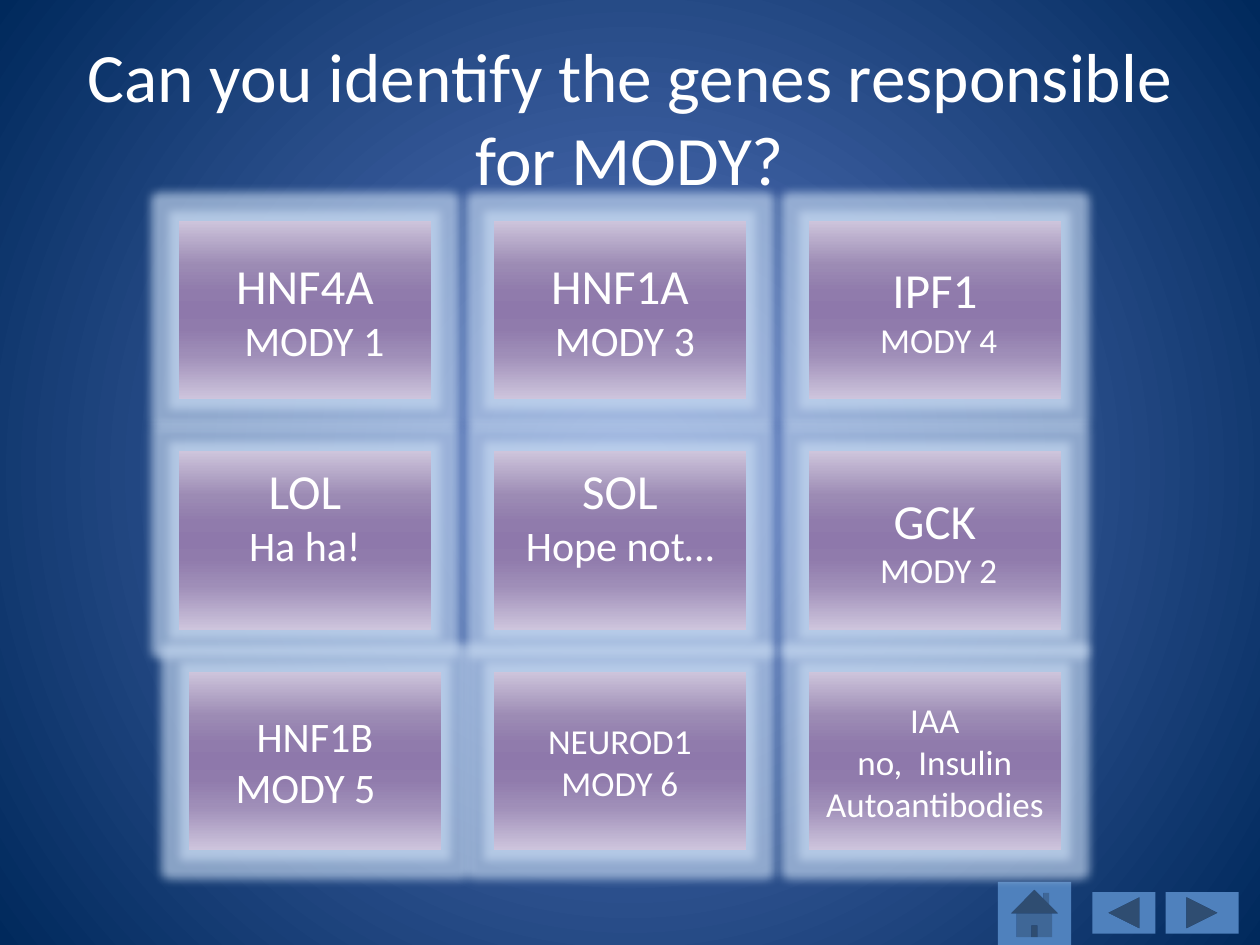
from dataclasses import dataclass

from lxml import etree
from pptx import Presentation
from pptx.dml.color import RGBColor
from pptx.enum.shapes import MSO_SHAPE as Shape
from pptx.enum.text import MSO_ANCHOR as Anchor, PP_ALIGN as Align
from pptx.oxml import parse_xml
from pptx.oxml.ns import nsdecls, qn
from pptx.slide import Slide
from pptx.text.text import TextFrame
from pptx.util import Inches, Pt


@dataclass(frozen=True)
class Theme:
    font: str = "Calibri"
    text: str = "FFFFFF"
    button: str = "4F81BD"
    glow: str = "C6D9F1"
    background: tuple = ((0, "5E7CC5"), (100, "00295C"))
    tile: tuple = ((0, "CEC5DC"), (25, "9C8BB4"), (40, "907BAC"), (50, "8E78AB"),
                   (60, "907BAC"), (75, "9F8EB8"), (100, "CEC5DD"))
    title_size: float = 39.6
    large: float = 28
    medium: float = 24
    small: float = 20


@dataclass(frozen=True)
class Line:
    text: str
    size: float
    indent_left: float = 0
    indent_right: float = 0


@dataclass(frozen=True)
class Tile:
    lines: tuple[Line, ...]
    shift: float = 0
    space_below: float = 0


@dataclass(frozen=True)
class Button:
    kind: Shape
    left: float
    top: float
    width: float
    height: float


THEME = Theme()
COLUMNS = (1.42, 3.92, 6.42)
ROWS = (1.75, 3.58, 5.33)
TILE_WIDTH, TILE_HEIGHT = 2, 1.42
LINEAR = '<a:lin ang="5400000" scaled="0"/>'
RADIAL = ('<a:path path="circle"><a:fillToRect l="50000" t="50000" '
          'r="50000" b="50000"/></a:path>')

TILES = (
    (Tile((Line("HNF4A", THEME.large), Line("MODY 1", THEME.medium, 0.15))),
     Tile((Line("HNF1A", THEME.large), Line("MODY 3", THEME.medium, 0.08))),
     Tile((Line("IPF1", THEME.large), Line("MODY 4", THEME.small, 0.06)))),
    (Tile((Line("LOL", THEME.large), Line("Ha ha!", THEME.medium)), space_below=0.4),
     Tile((Line("SOL", THEME.large), Line("Hope not…", THEME.medium)), space_below=0.4),
     Tile((Line("GCK", THEME.large), Line("MODY 2", THEME.small, 0.06)))),
    (Tile((Line("HNF1B", THEME.medium), Line("MODY 5", THEME.medium, 0, 0.15)), shift=0.08),
     Tile((Line("NEUROD1", THEME.small), Line("MODY 6", THEME.small))),
     Tile((Line("IAA", THEME.small), Line("no,  Insulin Autoantibodies", THEME.small)))),
)
BUTTONS = (
    Button(Shape.ACTION_BUTTON_BACK_OR_PREVIOUS, 8.67, 7.08, 0.5, 0.33),
    Button(Shape.ACTION_BUTTON_FORWARD_OR_NEXT, 9.25, 7.08, 0.58, 0.33),
    Button(Shape.ACTION_BUTTON_HOME, 7.92, 7, 0.58, 0.5),
)


def set_gradient(properties: etree._Element, stops: tuple, direction: str) -> None:
    """Swap the solid fill of a properties element for a gradient."""
    stop_xml = "".join(
        f'<a:gs pos="{position * 1000}"><a:srgbClr val="{color}"/></a:gs>'
        for position, color in stops)
    gradient = parse_xml(f'<a:gradFill {nsdecls("a")} rotWithShape="1">'
                         f'<a:gsLst>{stop_xml}</a:gsLst>{direction}</a:gradFill>')
    properties.replace(properties.find(qn("a:solidFill")), gradient)


def write_text(frame: TextFrame, *lines: Line, space_below: float = 0) -> None:
    frame.word_wrap = True
    frame.vertical_anchor = Anchor.MIDDLE
    frame.margin_bottom = Inches(0.05 + space_below)
    for index, line in enumerate(lines):
        paragraph = frame.add_paragraph() if index else frame.paragraphs[0]
        paragraph.alignment = Align.CENTER
        indents = paragraph._p.get_or_add_pPr()
        indents.set("marL", str(Inches(line.indent_left)))
        indents.set("marR", str(Inches(line.indent_right)))
        run = paragraph.add_run()
        run.text = line.text
        run.font.name = THEME.font
        run.font.size = Pt(line.size)
        run.font.color.rgb = RGBColor.from_string(THEME.text)


def add_filled_shape(slide: Slide, kind: Shape, left: float, top: float,
                     width: float, height: float):
    shape = slide.shapes.add_shape(kind, Inches(left), Inches(top),
                                   Inches(width), Inches(height))
    shape.shadow.inherit = False
    shape.fill.solid()
    shape.fill.fore_color.rgb = RGBColor.from_string(THEME.button)
    shape.line.fill.background()
    return shape


def add_tile(slide: Slide, tile: Tile, left: float, top: float) -> None:
    shape = add_filled_shape(slide, Shape.RECTANGLE, left + tile.shift, top,
                             TILE_WIDTH, TILE_HEIGHT)
    properties = shape._element.spPr
    set_gradient(properties, THEME.tile, LINEAR)
    properties.find(qn("a:effectLst")).append(parse_xml(
        f'<a:glow {nsdecls("a")} rad="{Inches(0.15)}"><a:srgbClr val="{THEME.glow}">'
        '<a:alpha val="65000"/></a:srgbClr></a:glow>'))
    write_text(shape.text_frame, *tile.lines, space_below=tile.space_below)


def main() -> None:
    presentation = Presentation()
    presentation.slide_width, presentation.slide_height = Inches(10), Inches(7.5)
    slide = presentation.slides.add_slide(presentation.slide_layouts[6])

    # Background
    slide.background.fill.solid()
    set_gradient(slide.element.find(".//" + qn("p:bgPr")), THEME.background, RADIAL)

    # Navigation buttons
    for button in BUTTONS:
        add_filled_shape(slide, button.kind, button.left, button.top,
                         button.width, button.height)

    # Title
    title = slide.shapes.add_textbox(Inches(0.5), Inches(0.3), Inches(9), Inches(1.25))
    write_text(title.text_frame,
               Line("Can you identify the genes responsible for MODY?", THEME.title_size))

    # Gene tiles
    for top, row in zip(ROWS, TILES):
        for left, tile in zip(COLUMNS, row):
            add_tile(slide, tile, left, top)

    presentation.save("out.pptx")


if __name__ == "__main__":
    main()
